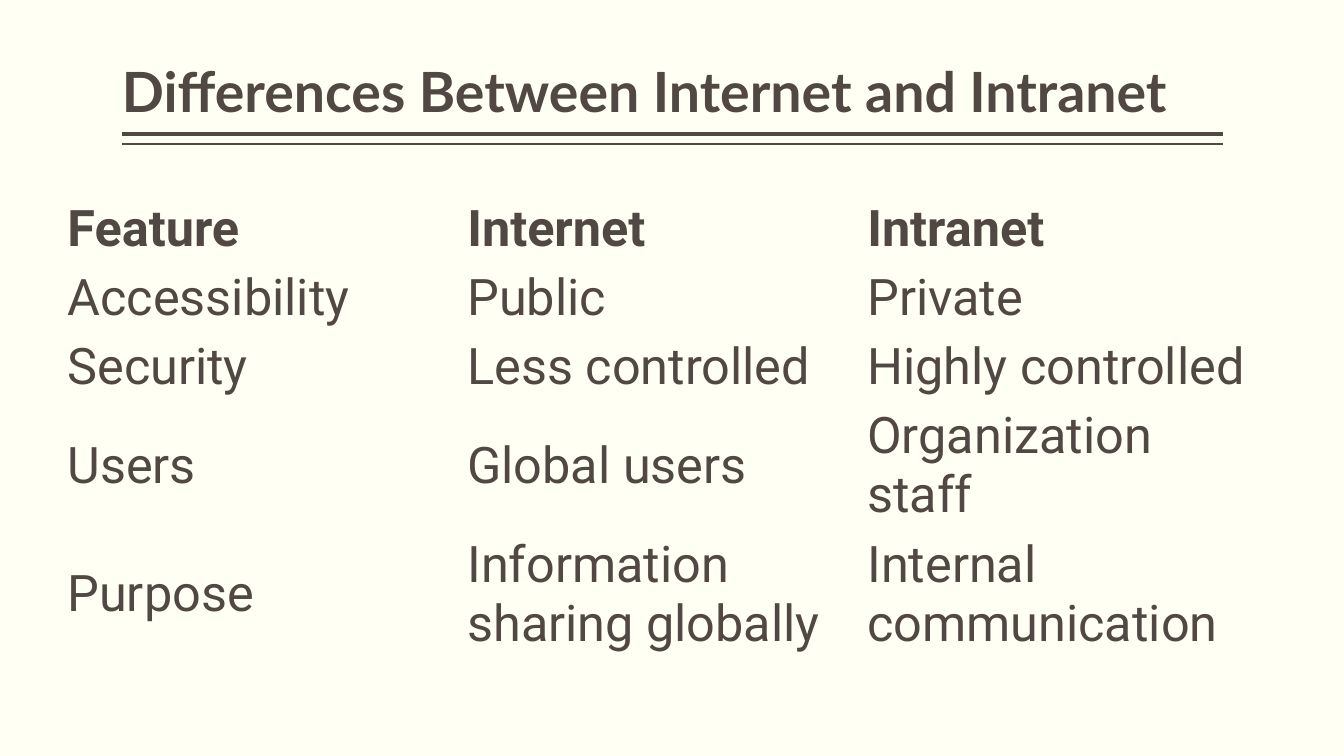
from lxml.etree import SubElement
from pptx import Presentation
from pptx.dml.color import RGBColor
from pptx.enum.shapes import MSO_CONNECTOR as Connector
from pptx.enum.text import MSO_ANCHOR as Anchor, MSO_AUTO_SIZE as AutoSize, PP_ALIGN as Align
from pptx.oxml.ns import qn
from pptx.util import Pt

TITLE = "Differences Between Internet and Intranet"
FEATURES = [
    ("Feature", "Internet", "Intranet"),
    ("Accessibility", "Public", "Private"),
    ("Security", "Less controlled", "Highly controlled"),
    ("Users", "Global users", "Organization staff"),
    ("Purpose", "Information sharing globally", "Internal communication"),
]
TEXT_LINES = [1, 1, 1, 2, 2]
COLORS = {"background": "FFFFF3", "ink": "514843"}
RULES = [(95.9, 3), (103, 1)]
PLAIN_TABLE_STYLE = "{2D5ABB26-0587-4C30-8999-92F81FD0307C}"

TITLE_LEFT, TITLE_TOP, TITLE_WIDTH, TITLE_HEIGHT = 87.1, 5.8, 786.2, 86.4
TABLE_LEFT, TABLE_TOP, COLUMN_WIDTH = 41, 139, 285.7
LINE_HEIGHT, ROW_PADDING = 42.2, 7.2


def ink():
    return RGBColor.from_string(COLORS["ink"])


def write(frame, text, *, font, size, bold=False, spacing=None):
    paragraph = frame.paragraphs[0]
    paragraph.alignment = Align.LEFT
    paragraph.line_spacing = spacing
    run = paragraph.add_run()
    run.text = text
    run.font.name = font
    run.font.size = Pt(size)
    run.font.bold = bold
    run.font.color.rgb = ink()


def add_title(slide):
    title = slide.shapes.title
    title.left, title.top = Pt(TITLE_LEFT), Pt(TITLE_TOP)
    title.width, title.height = Pt(TITLE_WIDTH), Pt(TITLE_HEIGHT)
    frame = title.text_frame
    frame.word_wrap = True
    frame.auto_size = AutoSize.NONE
    frame.vertical_anchor = Anchor.BOTTOM
    frame.margin_left = frame.margin_right = 0
    frame.margin_top = frame.margin_bottom = Pt(3.6)
    write(frame, TITLE, font="Lato", size=39.6, bold=True, spacing=0.9)


def add_rules(slide):
    for top, weight in RULES:
        rule = slide.shapes.add_connector(
            Connector.STRAIGHT, Pt(TITLE_LEFT), Pt(top), Pt(TITLE_LEFT + TITLE_WIDTH), Pt(top)
        )
        rule.line.color.rgb = ink()
        rule.line.width = Pt(weight)
        SubElement(rule._element.spPr, qn("a:effectLst"))


def add_comparison(slide):
    heights = [lines * LINE_HEIGHT + ROW_PADDING for lines in TEXT_LINES]
    columns = len(FEATURES[0])
    table = slide.shapes.add_table(
        len(FEATURES), columns, Pt(TABLE_LEFT), Pt(TABLE_TOP),
        Pt(columns * COLUMN_WIDTH), Pt(sum(heights)),
    ).table
    table.first_row = True
    table.horz_banding = False
    table._tbl.tblPr.find(qn("a:tableStyleId")).text = PLAIN_TABLE_STYLE
    for column in table.columns:
        column.width = Pt(COLUMN_WIDTH)
    for row_index, (row, height, entries) in enumerate(zip(table.rows, heights, FEATURES)):
        row.height = Pt(height)
        for cell, entry in zip(row.cells, entries):
            cell.fill.background()
            cell.vertical_anchor = Anchor.MIDDLE
            write(cell.text_frame, entry, font="Roboto", size=36, bold=row_index == 0)


def main():
    deck = Presentation()
    deck.slide_width, deck.slide_height = Pt(960), Pt(540)
    slide = deck.slides.add_slide(deck.slide_layouts[5])
    slide.background.fill.solid()
    slide.background.fill.fore_color.rgb = RGBColor.from_string(COLORS["background"])
    add_rules(slide)
    add_title(slide)
    add_comparison(slide)
    deck.save("out.pptx")


if __name__ == "__main__":
    main()
